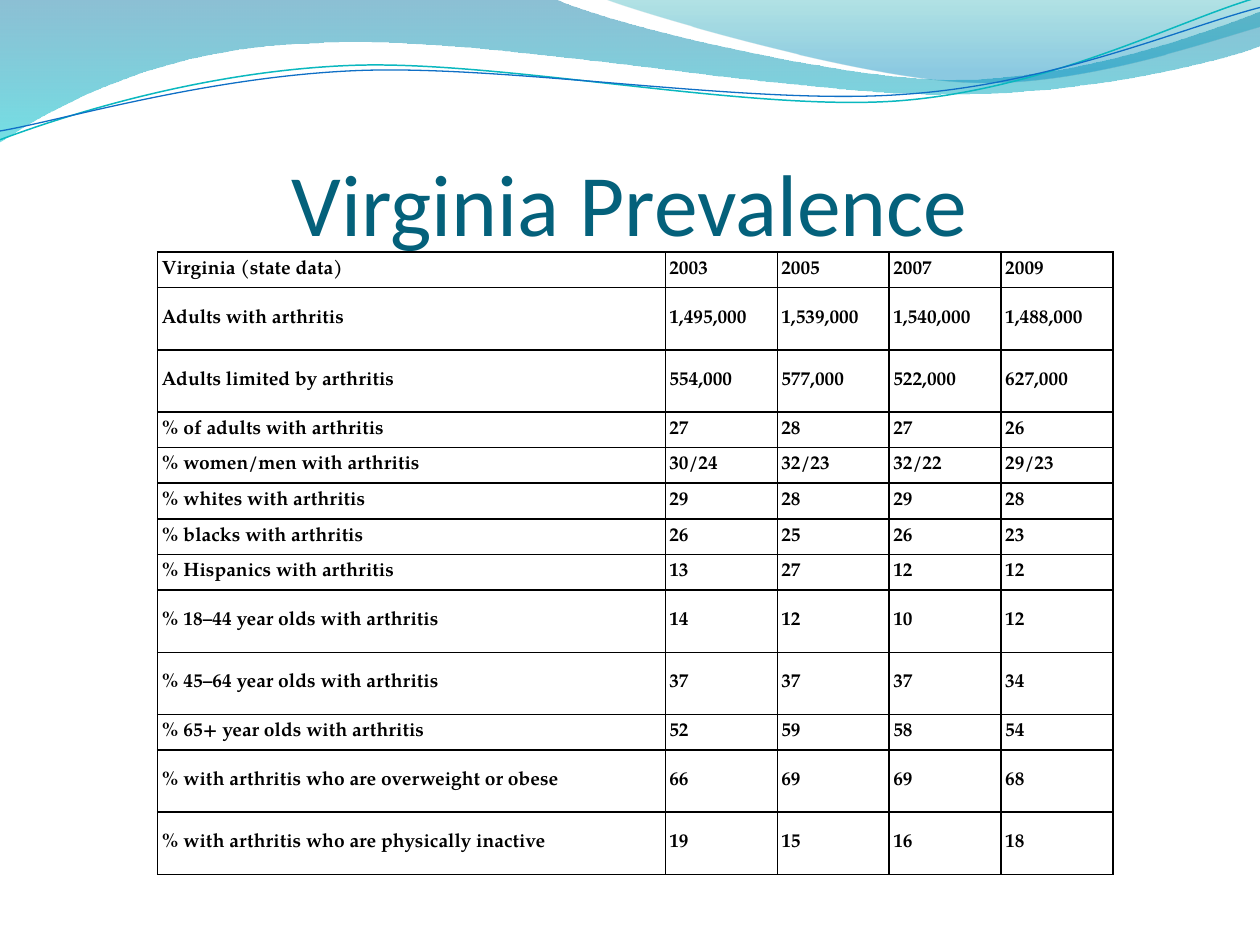
from lxml.etree import SubElement
from pptx import Presentation
from pptx.dml.color import RGBColor as RGB
from pptx.enum.text import MSO_ANCHOR as Anchor, PP_ALIGN as Align
from pptx.oxml.ns import qn
from pptx.util import Pt

HUES = {
    "title": "04617B", "ink": "000000", "teal": "0AB8BF", "blue": "0F6FC6",
    "deep": "0074A1", "aqua": "00C6CF", "sea": "00A1A9", "sky": "008BBF",
}


def trace(shapes, start, parts, close):
    spots = [part[i:i + 2] for part in parts for i in range(0, len(part), 2)]
    pen = shapes.build_freeform(Pt(start[0]), Pt(start[1]), 1.0)
    pen.add_line_segments([(Pt(x), Pt(y)) for x, y in spots], close=close)
    shape = pen.convert_to_shape()
    shape.shadow.inherit = False
    outline = next(shape._element.iter(qn("a:path")))
    steps = iter(outline.findall(qn("a:lnTo")))
    for part in parts:
        group = [next(steps) for _ in range(len(part) // 2)]
        if len(group) == 3:
            bend = SubElement(outline, qn("a:cubicBezTo"))
            group[0].addprevious(bend)
            for step in group:
                bend.append(step[0])
                outline.remove(step)
    return shape


def edge(cell, side):
    line = SubElement(cell._tc.get_or_add_tcPr(), qn("a:" + side), w=str(Pt(1)))
    fill = SubElement(line, qn("a:solidFill"))
    SubElement(fill, qn("a:srgbClr"), val=HUES["ink"])


deck = Presentation()
deck.slide_width, deck.slide_height = Pt(720), Pt(540)
slide = deck.slides.add_slide(deck.slide_layouts[6])

waves = [
    ((0, 0), [
        (316.8, -0.7),
        (342.7, 12.2, 478.1, 45.4, 545.8, 45.4),
        (614.2, 45.4, 689.8, 18.7, 720, 6.5),
        (720.7, 25.9),
        (707.8, 31.7, 626.4, 54.7, 537.1, 54),
        (447.8, 54, 275, 20.2, 185, 24.5),
        (92.9, 25.9, 33.1, 59.8, -0.7, 81.4),
        (0, 0),
    ], [(0, "deep", 45), (1, "aqua", 55)]),
    ((344.9, -0.7), [
        (366.5, 7.9, 491, 44.6, 553.7, 46.8),
        (616.3, 49.7, 691.9, 23, 720, 15.1),
        (720, 0),
        (344.9, -0.7),
    ], [(0, "sea", 30), (0.8, "sky", 45)]),
]
for start, parts, stops in waves:
    wave = trace(slide.shapes, start, parts, True)
    wave.line.fill.background()
    wave.fill.gradient()
    wave.fill.gradient_angle = 270
    for stop, (place, hue, alpha) in zip(wave.fill.gradient_stops, stops):
        stop.position = place
        stop.color.rgb = RGB.from_string(HUES[hue])
    tints = wave._element.spPr.iter(qn("a:srgbClr"))
    for tint, (place, hue, alpha) in zip(list(tints), stops):
        SubElement(tint, qn("a:alpha"), val=str(alpha * 1000))

curves = [
    ((-1.4, 62.9), [
        (33.7, 51.6, 114, 29.4, 199.8, 29.9),
        (284.8, 30.3, 425.8, 67.2, 512.4, 64.9),
        (599, 62.4, 676.4, 25.7, 720.2, 15.6),
    ], "teal", 0.85),
    ((-1.2, 57.9), [
        (33, 53.8, 118.3, 32.5, 204, 33),
        (290.5, 33.5, 428.9, 63.8, 515.5, 61.3),
        (601.3, 59.7, 678.5, 30.1, 721.4, 21.3),
    ], "blue", 0.75),
]
for start, parts, hue, width in curves:
    curve = trace(slide.shapes, start, parts, False)
    curve.rotation = 357.3
    curve.fill.background()
    curve.line.color.rgb = RGB.from_string(HUES[hue])
    curve.line.width = Pt(width)

title = slide.shapes.add_textbox(Pt(36), Pt(55.4), Pt(648), Pt(90)).text_frame
title.word_wrap = True
title.vertical_anchor = Anchor.BOTTOM
title.margin_left = title.margin_right = title.margin_bottom = 0
title.text = "Virginia Prevalence"
para = title.paragraphs[0]
para.alignment = Align.CENTER
font = para.runs[0].font
font.name, font.size = "Calibri", Pt(50)
font.color.rgb = RGB.from_string(HUES["title"])

SMALL, TALL = 20.4, 35.5
rows = [
    (SMALL, "Virginia (state data)", "2003", "2005", "2007", "2009"),
    (TALL, "Adults with arthritis", "1,495,000", "1,539,000", "1,540,000", "1,488,000"),
    (TALL, "Adults limited by arthritis", "554,000", "577,000", "522,000", "627,000"),
    (SMALL, "% of adults with arthritis", "27", "28", "27", "26"),
    (SMALL, "% women/men with arthritis", "30/24", "32/23", "32/22", "29/23"),
    (SMALL, "% whites with arthritis", "29", "28", "29", "28"),
    (SMALL, "% blacks with arthritis", "26", "25", "26", "23"),
    (SMALL, "% Hispanics with arthritis", "13", "27", "12", "12"),
    (TALL, "% 18–44 year olds with arthritis", "14", "12", "10", "12"),
    (TALL, "% 45–64 year olds with arthritis", "37", "37", "37", "34"),
    (SMALL, "% 65+ year olds with arthritis", "52", "59", "58", "54"),
    (TALL, "% with arthritis who are overweight or obese", "66", "69", "69", "68"),
    (TALL, "% with arthritis who are physically inactive", "19", "15", "16", "18"),
]
widths = [290.2] + [64] * 4
high = sum(row[0] for row in rows)
frame = slide.shapes.add_table(
    len(rows), len(widths), Pt(90), Pt(144), Pt(sum(widths)), Pt(high))
table = frame.table
table.first_row = table.horz_banding = False
for col, width in zip(table.columns, widths):
    col.width = Pt(width)
for r, (tall, *texts) in enumerate(rows):
    table.rows[r].height = Pt(tall)
    for c, text in enumerate(texts):
        cell = table.cell(r, c)
        cell.vertical_anchor = Anchor.MIDDLE
        cell.margin_left = cell.margin_right = Pt(2.3)
        cell.margin_top = cell.margin_bottom = Pt(2.3)
        for side in ("lnL", "lnR", "lnT", "lnB"):
            edge(cell, side)
        cell.fill.background()
        cell.text_frame.text = text
        font = cell.text_frame.paragraphs[0].runs[0].font
        font.name, font.size, font.bold = "TeX Gyre Pagella", Pt(11), True
        font.color.rgb = RGB.from_string(HUES["ink"])

deck.save("out.pptx")
